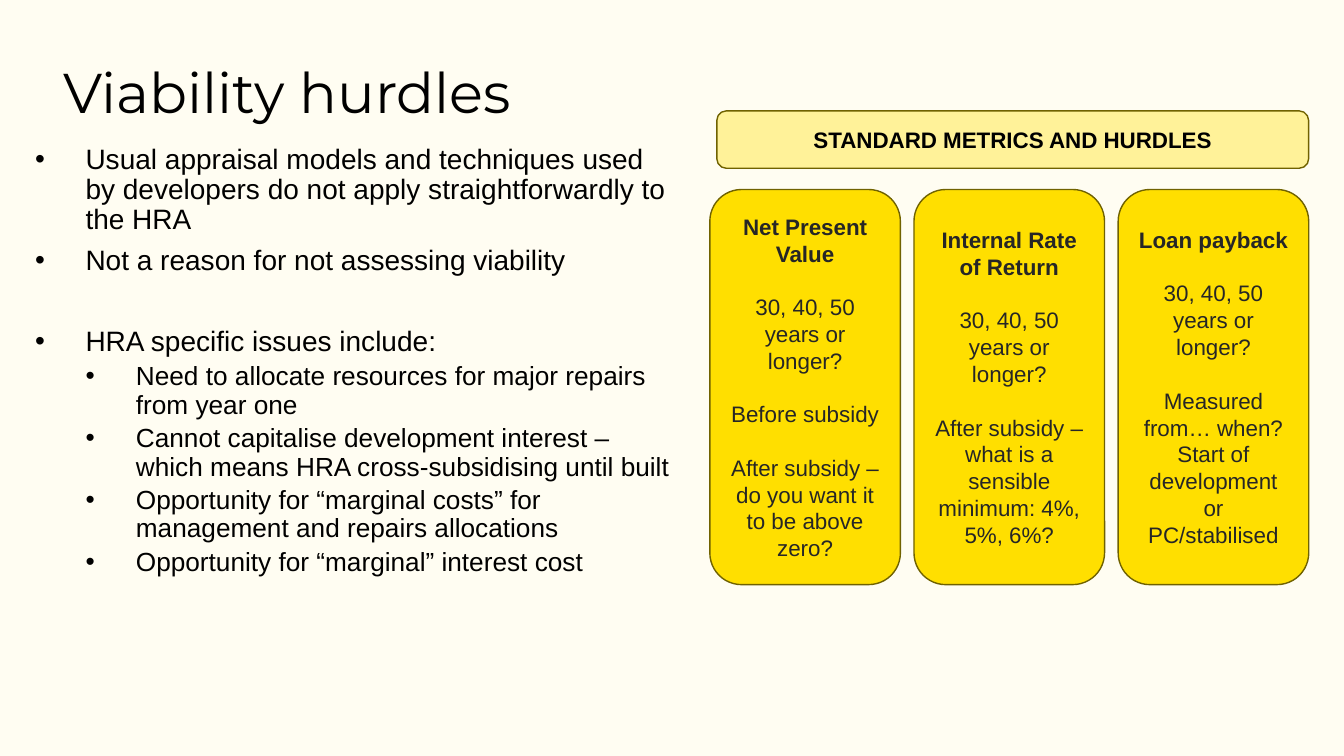
from dataclasses import dataclass
from lxml.etree import SubElement
from pptx import Presentation
from pptx.dml.color import RGBColor
from pptx.enum.shapes import MSO_SHAPE
from pptx.enum.text import MSO_ANCHOR, PP_ALIGN
from pptx.oxml.ns import qn
from pptx.util import Inches, Pt

# Content
TITLE = "Viability hurdles"
BANNER = "STANDARD METRICS AND HURDLES"

# (indent level, text, starts a new group)
BULLETS = [
    (0, "Usual appraisal models and techniques used by developers do not apply "
        "straightforwardly to the HRA", False),
    (0, "Not a reason for not assessing viability", False),
    (0, "HRA specific issues include:", True),
    (1, "Need to allocate resources for major repairs from year one", False),
    (1, "Cannot capitalise development interest – which means HRA "
        "cross-subsidising until built", False),
    (1, "Opportunity for “marginal costs” for management and repairs allocations", False),
    (1, "Opportunity for “marginal” interest cost", False),
]

# (heading, groups of lines)
HORIZON = ["30, 40, 50 years or longer?"]
METRICS = [
    ("Net Present Value",
     [HORIZON, ["Before subsidy"], ["After subsidy – do you want it to be above zero?"]]),
    ("Internal Rate of Return",
     [HORIZON, ["After subsidy – what is a sensible minimum: 4%, 5%, 6%?"]]),
    ("Loan payback",
     [HORIZON, ["Measured from… when?", "Start of development or PC/stabilised"]]),
]


# Theme
@dataclass(frozen=True)
class Theme:
    page: str = "FFFDF2"
    card: str = "FFDF00"
    banner: str = "FFF299"
    outline: str = "706200"
    ink: str = "000000"
    card_ink: str = "262626"
    title_font: str = "Montserrat"
    body_font: str = "Arial"
    title_size: float = 40
    bullet_sizes: tuple = (20, 18.7)
    bullet_gaps: tuple = (7.5, 3.8)
    group_gap: float = 29
    card_size: float = 16
    card_gap: float = 19


T = Theme()

# Layout in inches
SLIDE_W, SLIDE_H = 13.33, 7.5
TITLE_BOX = (0.53, 0.6, 10.04, 0.79)
BODY_BOX = (0.25, 1.39, 6.5, 5.12)
BANNER_BOX = (7.11, 1.1, 5.87, 0.57)
CARDS_LEFT, CARDS_RIGHT = 7.04, 12.98
CARD_TOP, CARD_W, CARD_H = 1.88, 1.89, 3.92
CARD_STEP = (CARDS_RIGHT - CARDS_LEFT - CARD_W) / (len(METRICS) - 1)
INDENT = 0.5


def add_text(tf, text, size, color=T.ink, font=T.body_font, bold=False,
             align=PP_ALIGN.LEFT, before=0, spacing=None, level=None):
    """Write one paragraph; a level gives it a bullet."""
    first = not tf.paragraphs[0].runs
    p = tf.paragraphs[0] if first else tf.add_paragraph()
    p.alignment = align
    if spacing:
        p.line_spacing = spacing
    if not first:
        p.space_before = Pt(before)
    if level is not None:
        p.level = level
        pPr = p._p.get_or_add_pPr()
        pPr.set("marL", str(Inches(INDENT * (level + 1))))
        pPr.set("indent", str(-Inches(INDENT)))
        SubElement(pPr, qn("a:buFont")).set("typeface", T.body_font)
        SubElement(pPr, qn("a:buChar")).set("char", "•")
    r = p.add_run()
    r.text = text
    r.font.name, r.font.size, r.font.bold = font, Pt(size), bold
    r.font.color.rgb = RGBColor.from_string(color)


def add_text_frame(s, box):
    tf = s.shapes.add_textbox(*map(Inches, box)).text_frame
    tf.word_wrap = True
    return tf


def add_panel(s, box, fill):
    sp = s.shapes.add_shape(MSO_SHAPE.ROUNDED_RECTANGLE, *map(Inches, box))
    sp.shadow.inherit = False
    sp.fill.solid()
    sp.fill.fore_color.rgb = RGBColor.from_string(fill)
    sp.line.color.rgb = RGBColor.from_string(T.outline)
    sp.line.width = Pt(1)
    tf = sp.text_frame
    tf.word_wrap = True
    tf.vertical_anchor = MSO_ANCHOR.MIDDLE
    return tf


def main():
    prs = Presentation()
    prs.slide_width, prs.slide_height = Inches(SLIDE_W), Inches(SLIDE_H)
    s = prs.slides.add_slide(prs.slide_layouts[6])
    s.background.fill.solid()
    s.background.fill.fore_color.rgb = RGBColor.from_string(T.page)

    # Title
    add_text(add_text_frame(s, TITLE_BOX), TITLE, T.title_size,
             font=T.title_font, spacing=0.9)

    # Bullets
    tf = add_text_frame(s, BODY_BOX)
    for level, text, new_group in BULLETS:
        gap = T.bullet_gaps[level] + (T.group_gap if new_group else 0)
        add_text(tf, text, T.bullet_sizes[level], before=gap, spacing=0.9, level=level)

    # Banner
    add_text(add_panel(s, BANNER_BOX, T.banner), BANNER, T.card_size,
             bold=True, align=PP_ALIGN.CENTER)

    # Metric cards
    for i, (heading, groups) in enumerate(METRICS):
        box = (CARDS_LEFT + i * CARD_STEP, CARD_TOP, CARD_W, CARD_H)
        tf = add_panel(s, box, T.card)
        add_text(tf, heading, T.card_size, color=T.card_ink, bold=True,
                 align=PP_ALIGN.CENTER)
        for lines in groups:
            for n, line in enumerate(lines):
                add_text(tf, line, T.card_size, color=T.card_ink,
                         align=PP_ALIGN.CENTER, before=0 if n else T.card_gap)

    prs.save("out.pptx")


if __name__ == "__main__":
    main()
